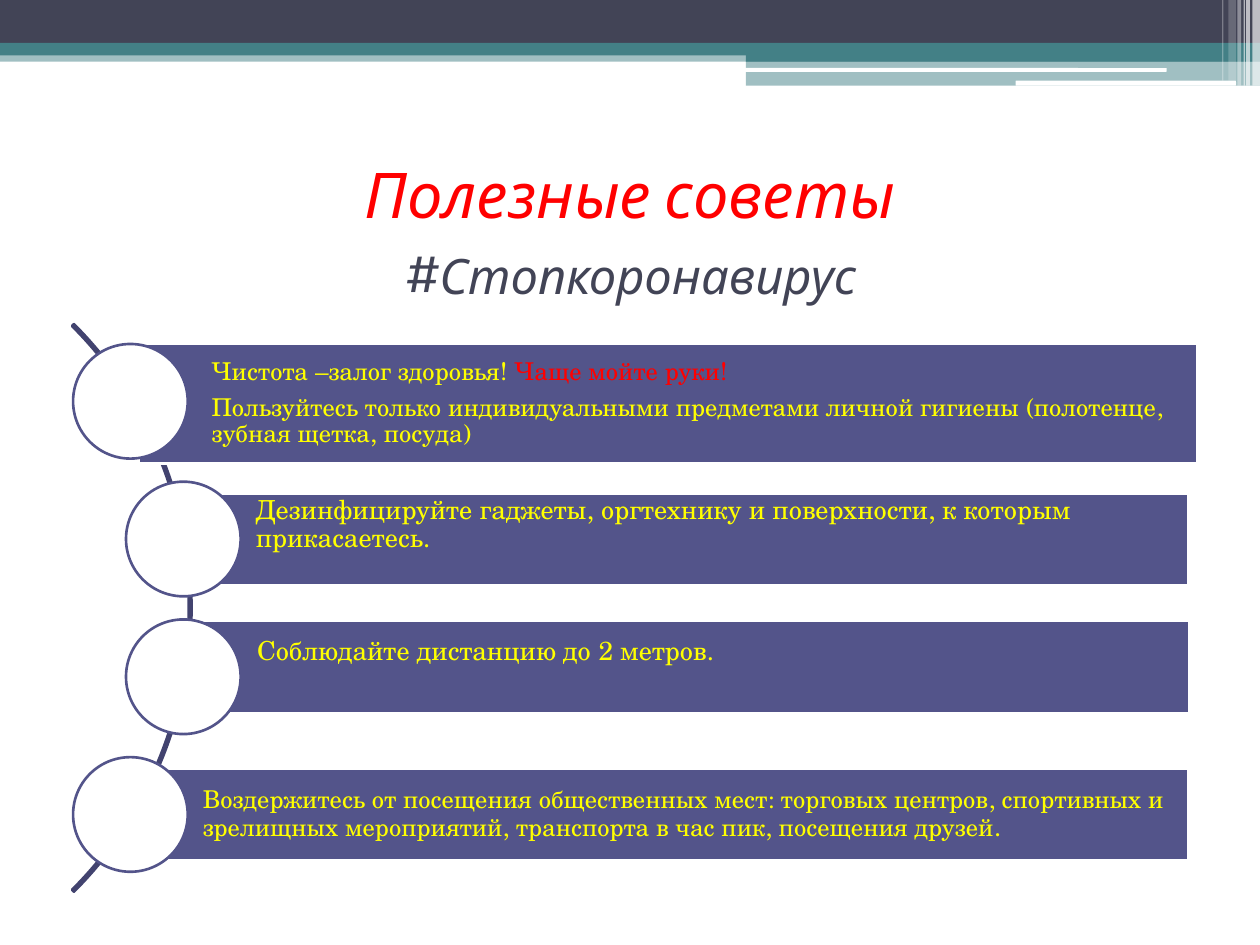
from lxml import etree
from pptx import Presentation
from pptx.dml.color import RGBColor
from pptx.enum.shapes import MSO_SHAPE
from pptx.enum.text import MSO_ANCHOR, MSO_AUTO_SIZE, PP_ALIGN
from pptx.oxml.ns import qn
from pptx.util import Inches, Pt

RECT, ROUND = MSO_SHAPE.RECTANGLE, MSO_SHAPE.ROUNDED_RECTANGLE
OVAL, ARC = MSO_SHAPE.OVAL, MSO_SHAPE.BLOCK_ARC
MIDDLE, NO_FIT = MSO_ANCHOR.MIDDLE, MSO_AUTO_SIZE.NONE
LEFT, CENTER = PP_ALIGN.LEFT, PP_ALIGN.CENTER

THEME = {
    "dark": "424456", "teal": "438086", "white": "FFFFFF",
    "bar": "53548A", "arc": "42436F", "text": "FFFF00", "accent": "FF0000",
    "title_font": "Karla", "body_font": "TeX Gyre Schola",
    "title": 36, "subtitle": 27.9, "body": 15, "small": 14, "line": 1.5,
}

prs = Presentation()
prs.slide_width, prs.slide_height = Inches(10), Inches(7.5)
COL, ROW = prs.slide_width / 100, prs.slide_height / 75
slide = prs.slides.add_slide(prs.slide_layouts[5])


def add_part(kind, box, fill=None, opacity=100, line=None):
    """Draw a preset shape; box is left, top, width, height in grid cells."""
    left, top, width, height = box
    shape = slide.shapes.add_shape(kind, round(left * COL), round(top * ROW),
                                   round(width * COL), round(height * ROW))
    shape.shadow.inherit = False
    if fill:
        shape.fill.solid()
        shape.fill.fore_color.rgb = RGBColor.from_string(THEME[fill])
        if opacity < 100:
            color = shape.fill._xPr.find(qn("a:solidFill"))[0]
            etree.SubElement(color, qn("a:alpha"), val=str(opacity * 1000))
    else:
        shape.fill.background()
    if line:
        shape.line.color.rgb = RGBColor.from_string(THEME[line])
        shape.line.width = Pt(THEME["line"])
    else:
        shape.line.fill.background()
    return shape


def add_words(paragraph, words, font, size, color, italic=False):
    run = paragraph.add_run()
    run.text = words
    style = {"name": THEME[font], "size": Pt(THEME[size]), "italic": italic}
    for key, value in style.items():
        setattr(run.font, key, value)
    run.font.color.rgb = RGBColor.from_string(THEME[color])


# Header bands
for kind, box, fill, opacity in [
    (RECT, (0, 4, 100, 0.9), "teal", 50),
    (RECT, (0, 0, 100, 3.4), "dark", 100),
    (RECT, (0, 3.4, 100, 1), "teal", 100),
    (RECT, (59.2, 3.9, 40.8, 1), "teal", 100),
    (RECT, (59.2, 4.8, 40.8, 2), "teal", 50),
    (ROUND, (59.1, 5.4, 33.5, 0.3), "white", 100),
    (ROUND, (80.6, 6.4, 17.5, 0.4), "white", 100),
]:
    add_part(kind, box, fill, opacity)

# Pale stripes at the right end of the header
for left, width, height, opacity in [
    (99.4, 0.6, 6.8, 65), (98.9, 0.3, 6.8, 65), (98.7, 0.1, 6.8, 60),
    (98.2, 0.3, 6.8, 40), (97.5, 0.6, 6.4, 20), (97, 0.1, 6.4, 30),
]:
    add_part(RECT, (left, 0, width, height), "white", opacity)

# Title
heading = slide.shapes.title
heading.left, heading.top = round(5 * COL), round(12.5 * ROW)
heading.width, heading.height = round(90 * COL), round(11.7 * ROW)
for key, value in {"vertical_anchor": MIDDLE, "word_wrap": True,
                   "auto_size": NO_FIT}.items():
    setattr(heading.text_frame, key, value)
heading_line = heading.text_frame.paragraphs[0]
heading_line.alignment = CENTER
add_words(heading_line, "Полезные советы", "title_font", "title", "accent", True)
heading_line.add_line_break()
add_words(heading_line, "#", "title_font", "title", "dark", True)
add_words(heading_line, "Стопкоронавирус", "title_font", "subtitle", "dark", True)

# Arc behind the tips
arc = add_part(ARC, (-48.5, 16.4, 63.7, 63.7), line="arc")
for index, value in enumerate((189, 27, 0.0034)):
    arc.adjustments[index] = value

# Tips: bar box, circle left, bottom inset in rows, paragraphs of (words, size, color)
tips = [
    ((11, 27.3, 84, 9.5), 5.8, 0.4, [
        [("Чистота –залог здоровья! ", "small", "text"),
         ("Чаще мойте руки!", "small", "accent")],
        [("Пользуйтесь только индивидуальными предметами личной гигиены "
          "(полотенце, зубная щетка, посуда)", "small", "text")]]),
    ((14.5, 39.2, 79.8, 7.3), 10, 2.8, [
        [("Дезинфицируйте гаджеты, оргтехнику и поверхности, "
          "к которым прикасаетесь.", "body", "text")]]),
    ((14.6, 49.3, 79.8, 7.3), 10, 2.8, [
        [("Соблюдайте дистанцию до 2 метров.", "body", "text")]]),
    ((10.3, 61, 84, 7.3), 5.8, 0.4, [
        [("Воздержитесь от посещения общественных мест: торговых центров, "
          "спортивных и зрелищных мероприятий, транспорта в час пик, "
          "посещения друзей", "small", "text"), (".", "body", "text")]]),
]
CIRCLE_TOP, CIRCLE_STEP, CIRCLE_SIZE = 27.3, 10.93, 9.1
for number, (box, circle_left, bottom_inset, paragraphs) in enumerate(tips):
    frame = add_part(RECT, box, "bar", line="white").text_frame
    for key, value in {
        "word_wrap": True, "vertical_anchor": MIDDLE,
        "margin_left": round(5.8 * COL), "margin_right": round(0.4 * COL),
        "margin_top": round(0.4 * ROW), "margin_bottom": round(bottom_inset * ROW),
    }.items():
        setattr(frame, key, value)
    for index, pieces in enumerate(paragraphs):
        paragraph = frame.add_paragraph() if index else frame.paragraphs[0]
        for key, value in {"alignment": LEFT, "line_spacing": 0.9,
                           "space_after": Pt(5)}.items():
            setattr(paragraph, key, value)
        for words, size, color in pieces:
            add_words(paragraph, words, "body_font", size, color)
    circle_top = CIRCLE_TOP + number * CIRCLE_STEP
    add_part(OVAL, (circle_left, circle_top, CIRCLE_SIZE, CIRCLE_SIZE),
             "white", line="bar")

prs.save("out.pptx")
